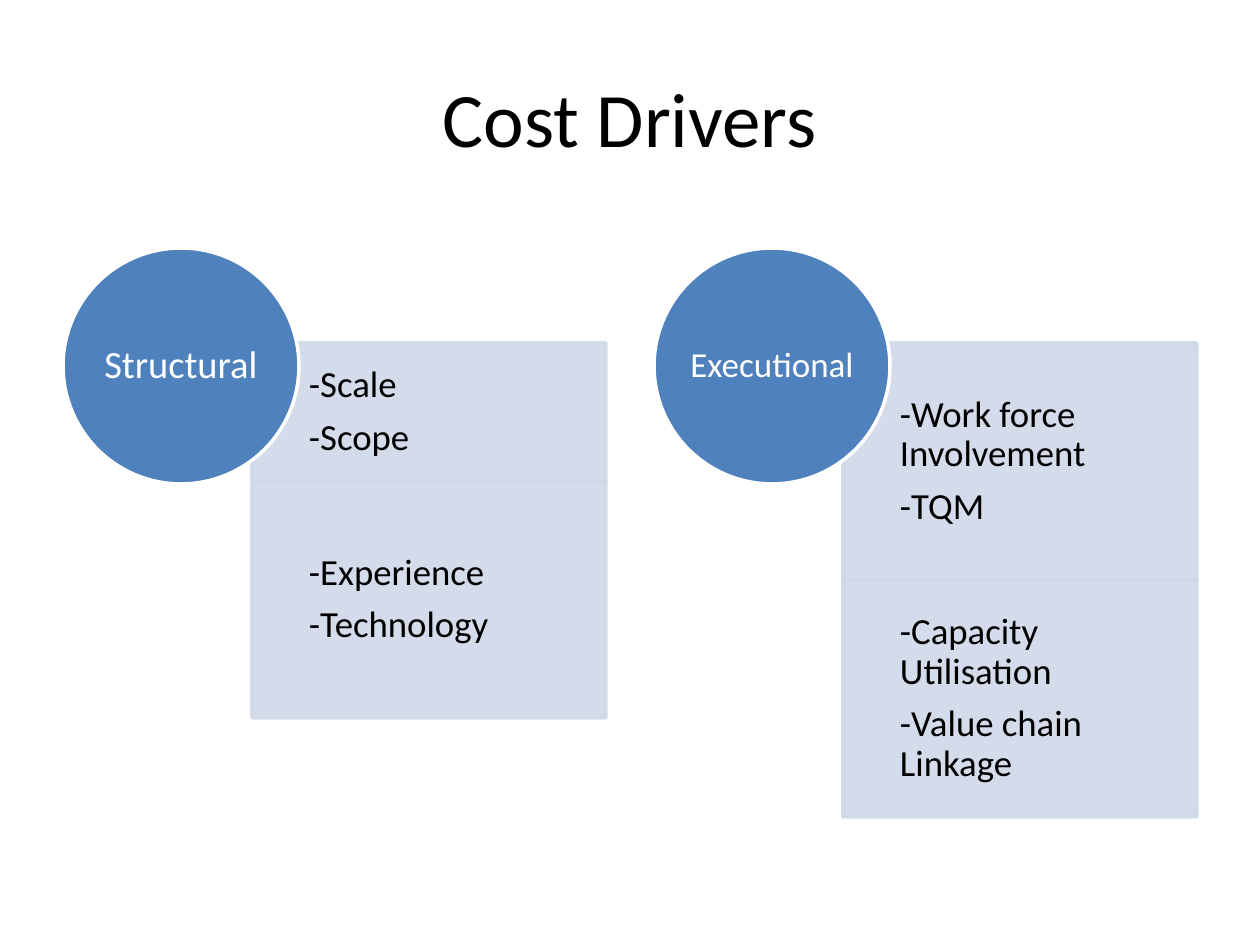
from dataclasses import dataclass
from typing import NamedTuple

from lxml.etree import SubElement
from pptx import Presentation
from pptx.dml.color import RGBColor
from pptx.enum.shapes import MSO_SHAPE
from pptx.enum.text import MSO_ANCHOR, PP_ALIGN
from pptx.oxml.ns import qn
from pptx.util import Emu, Pt

EMU_PER_PX = 914400 / 126


@dataclass(frozen=True)
class Theme:
    font: str = "Calibri"
    ink: str = "000000"
    white: str = "FFFFFF"
    circle: str = "4F81BD"
    panel: str = "D0D8E8"
    panel_alpha: int = 90
    line_width: int = 2
    title_size: int = 44
    item_size: int = 21


class Box(NamedTuple):
    left: int
    top: int
    width: int
    height: int


class Panel(NamedTuple):
    height: int
    items: tuple[str, ...]


class Driver(NamedTuple):
    name: str
    size: int
    panels: tuple[Panel, ...]


THEME = Theme()
TITLE = Box(63, 38, 1134, 158)
COLUMN_LEFT, COLUMN_STEP = 63, 591
CIRCLE_TOP, CIRCLE_SIZE = 248, 236
PANEL_TOP, PANEL_OFFSET, PANEL_WIDTH = 343, 189, 354
PANEL_INSETS = (57, 20, 20, 20)
DRIVERS = (
    Driver("Structural", 22, (
        Panel(138, ("-Scale", "-Scope")),
        Panel(237, ("-Experience", "-Technology")),
    )),
    Driver("Executional", 20, (
        Panel(237, ("-Work force Involvement", "-TQM")),
        Panel(237, ("-Capacity Utilisation", "-Value chain Linkage")),
    )),
)


def px(value: int) -> Emu:
    return Emu(round(value * EMU_PER_PX))


def write(sp, *lines: str, size: int, color: str = THEME.ink,
          align=PP_ALIGN.CENTER, insets=(0, 0, 0, 0), wrap: bool = True,
          line_spacing: float = 1.0, space_after: float = 0) -> None:
    tf = sp.text_frame
    tf.word_wrap = wrap
    tf.vertical_anchor = MSO_ANCHOR.MIDDLE
    tf.margin_left, tf.margin_top, tf.margin_right, tf.margin_bottom = map(px, insets)
    for i, line in enumerate(lines):
        p = tf.paragraphs[0] if i == 0 else tf.add_paragraph()
        p.alignment = align
        p.line_spacing = line_spacing
        p.space_after = Pt(space_after)
        r = p.add_run()
        r.text = line
        r.font.name = THEME.font
        r.font.size = Pt(size)
        r.font.color.rgb = RGBColor.from_string(color)


def add_block(s, kind: MSO_SHAPE, box: Box, fill: str, line: str, alpha: int = 100):
    sp = s.shapes.add_shape(kind, *map(px, box))
    sp.shadow.inherit = False
    sp.line.width = Pt(THEME.line_width)
    sp.fill.solid()
    for paint, color in ((sp.fill.fore_color, fill), (sp.line.color, line)):
        paint.rgb = RGBColor.from_string(color)
    if alpha < 100:
        for clr in sp._element.spPr.iter(qn("a:srgbClr")):
            SubElement(clr, qn("a:alpha")).set("val", str(alpha * 1000))
    return sp


def draw_driver(s, driver: Driver, left: int) -> None:
    top = PANEL_TOP
    for panel in driver.panels:
        box = Box(left + PANEL_OFFSET, top, PANEL_WIDTH, panel.height)
        sp = add_block(s, MSO_SHAPE.RECTANGLE, box, THEME.panel, THEME.panel,
                       THEME.panel_alpha)
        write(sp, *panel.items, size=THEME.item_size, align=PP_ALIGN.LEFT,
              insets=PANEL_INSETS, line_spacing=0.9,
              space_after=THEME.item_size * 0.35)
        top += panel.height
    box = Box(left, CIRCLE_TOP, CIRCLE_SIZE, CIRCLE_SIZE)
    sp = add_block(s, MSO_SHAPE.OVAL, box, THEME.circle, THEME.white)
    write(sp, driver.name, size=driver.size, color=THEME.white, wrap=False,
          line_spacing=0.9)


def main() -> None:
    prs = Presentation()
    prs.slide_width, prs.slide_height = px(1260), px(945)
    s = prs.slides.add_slide(prs.slide_layouts[6])
    write(s.shapes.add_textbox(*map(px, TITLE)), "Cost Drivers", size=THEME.title_size)
    for i, driver in enumerate(DRIVERS):
        draw_driver(s, driver, COLUMN_LEFT + i * COLUMN_STEP)
    prs.save("out.pptx")


if __name__ == "__main__":
    main()
